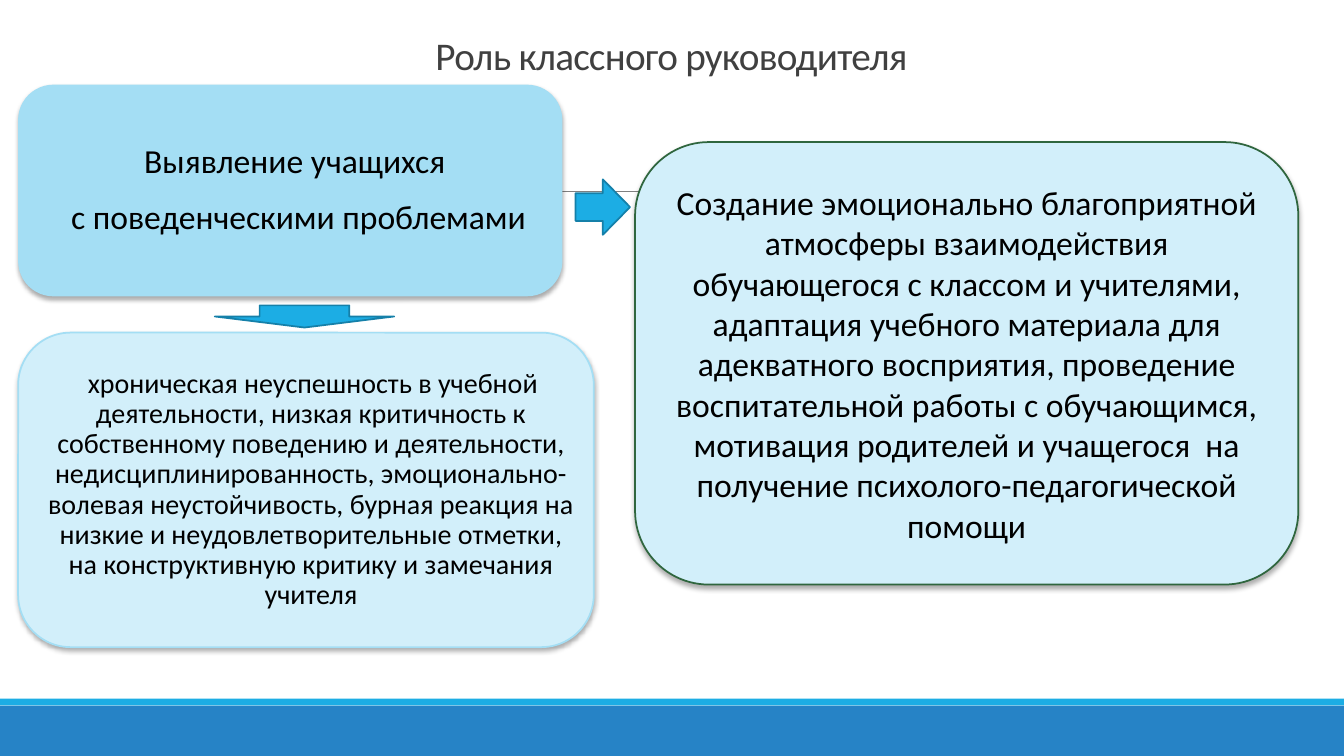
import pptx
import pptx.util
import pptx.dml.color
import pptx.enum.shapes
import pptx.enum.text
import pptx.oxml
import pptx.oxml.ns
from dataclasses import dataclass

Pt = pptx.util.Pt
SHAPE = pptx.enum.shapes.MSO_SHAPE
ANCHOR = pptx.enum.text.MSO_ANCHOR
WIDTH = pptx.util.Inches(13.333)
HEIGHT = pptx.util.Inches(7.5)


@dataclass(frozen=True)
class Theme:
    font: str = "Calibri"
    title_size: float = 28
    large: float = 24
    small: float = 20
    outline: float = 1.25
    title: str = "404040"
    text: str = "000000"
    accent: str = "1CADE4"
    accent_dark: str = "1580A9"
    base: str = "2683C6"
    panel: str = "A4DEF4"
    panel_light: str = "D2EFFA"
    green: str = "2F663E"
    rule: str = "808080"


THEME = Theme()


def rgb(value):
    return pptx.dml.color.RGBColor.from_string(value)


def area(left, top, width, height):
    """Turn percentages of the slide into lengths."""
    return [int(share * side / 100) for share, side in
            zip((left, top, width, height), (WIDTH, HEIGHT) * 2)]


def add_xml(parent, xml):
    namespace = pptx.oxml.ns.nsdecls("a")
    parent.append(pptx.oxml.parse_xml(xml.replace("NS", namespace, 1)))


def add_block(slide, kind, place, fill, line=None):
    sp = slide.shapes.add_shape(kind, *area(*place))
    sp.shadow.inherit = False
    sp.fill.solid()
    sp.fill.fore_color.rgb = rgb(fill)
    if line:
        sp.line.color.rgb = rgb(line)
        sp.line.width = Pt(THEME.outline)
    else:
        sp.line.fill.background()
    return sp


def write(sp, text, size, color=THEME.text, anchor=ANCHOR.MIDDLE):
    tf = sp.text_frame
    tf.word_wrap = True
    tf.vertical_anchor = anchor
    tf.text = text
    for p in tf.paragraphs:
        p.alignment = pptx.enum.text.PP_ALIGN.CENTER
        for r in p.runs:
            r.font.name = THEME.font
            r.font.size = Pt(size)
            r.font.color.rgb = rgb(color)
    return tf


def add_panel(slide, place, text, size, fill, line=None):
    """Add a rounded text panel with a soft shadow below it."""
    sp = add_block(slide, SHAPE.ROUNDED_RECTANGLE, place, fill, line)
    effects = sp._element.spPr.find(pptx.oxml.ns.qn("a:effectLst"))
    add_xml(effects, f'<a:outerShdw NS blurRad="{Pt(3.5)}" dist="{Pt(2.2)}" dir="5400000" '
                     'rotWithShape="0"><a:srgbClr val="000000"><a:alpha val="32000"/>'
                     '</a:srgbClr></a:outerShdw>')
    return write(sp, text, size)


def set_body_style(tf):
    """Use body spacing and a blank hanging bullet."""
    tf.margin_left = tf.margin_right = 0
    indent = pptx.util.Inches(0.1)
    for p in tf.paragraphs:
        p.line_spacing = 0.9
        p.space_before = Pt(12)
        p.space_after = Pt(2)
        pPr = p._p.get_or_add_pPr()
        pPr.set("marL", str(indent))
        pPr.set("indent", str(-indent))
        add_xml(pPr, f'<a:buClr NS><a:srgbClr val="{THEME.accent}"/></a:buClr>')
        add_xml(pPr, '<a:buChar NS char=" "/>')


def add_rule(slide, left, right, y):
    x1, y1, x2, y2 = area(left, y, right, y)
    line = slide.shapes.add_connector(
        pptx.enum.shapes.MSO_CONNECTOR.STRAIGHT, x1, y1, x2, y2)
    line.line.color.rgb = rgb(THEME.rule)
    line.line.width = Pt(0.5)
    add_xml(line._element.spPr, "<a:effectLst NS/>")


def add_title(slide, place, text):
    box = slide.shapes.add_textbox(*area(*place))
    tf = write(box, text, THEME.title_size, THEME.title, ANCHOR.BOTTOM)
    p = tf.paragraphs[0]
    p.line_spacing = 0.85
    p.runs[0]._r.get_or_add_rPr().set("spc", "-50")


def main():
    prs = pptx.Presentation()
    prs.slide_width, prs.slide_height = WIDTH, HEIGHT
    slide = prs.slides.add_slide(prs.slide_layouts[6])

    add_block(slide, SHAPE.RECTANGLE, (0, 93.33, 100, 6.67), THEME.base)
    add_block(slide, SHAPE.RECTANGLE, (0, 92.4, 100, 0.9), THEME.accent)
    add_rule(slide, 9.83, 91.58, 25.33)
    add_title(slide, (9, 4.13, 82.5, 6.93), "Роль классного руководителя ")

    set_body_style(add_panel(
        slide, (1.35, 11.2, 40.5, 28),
        "Выявление учащихся \nс поведенческими проблемами",
        THEME.large, THEME.panel))
    set_body_style(add_panel(
        slide, (1.35, 44, 42.83, 41.6),
        "хроническая неуспешность в учебной деятельности, низкая критичность "
        "к собственному поведению и деятельности, недисциплинированность, "
        "эмоционально-волевая неустойчивость, бурная реакция на низкие и "
        "неудовлетворительные отметки, на конструктивную критику и замечания учителя",
        THEME.small, THEME.panel_light, THEME.panel))
    add_panel(
        slide, (47.25, 18.8, 49.35, 58.53),
        "Создание эмоционально благоприятной атмосферы взаимодействия "
        "обучающегося с классом и учителями, адаптация учебного материала для "
        "адекватного восприятия, проведение воспитательной работы с обучающимся, "
        "мотивация родителей и учащегося  на получение "
        "психолого-педагогической помощи",
        THEME.large, THEME.panel_light, THEME.green)

    for kind, place in ((SHAPE.DOWN_ARROW, (15.98, 40.4, 13.35, 2.93)),
                        (SHAPE.RIGHT_ARROW, (42.83, 23.73, 4.05, 7.33))):
        add_block(slide, kind, place, THEME.accent, THEME.accent_dark)

    prs.save("out.pptx")


if __name__ == "__main__":
    main()
